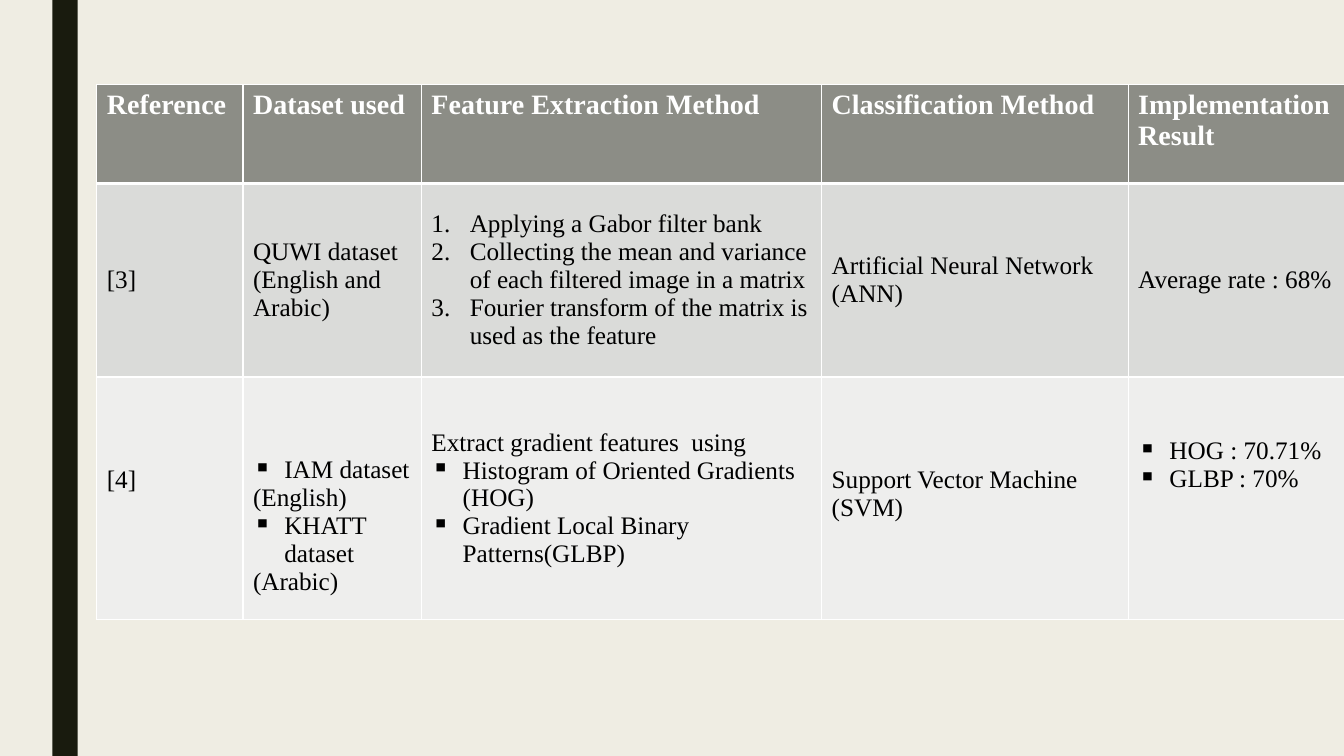
from dataclasses import dataclass
from typing import Optional

from lxml import etree
from pptx import Presentation
from pptx.dml.color import RGBColor
from pptx.enum.shapes import MSO_SHAPE
from pptx.enum.text import MSO_ANCHOR
from pptx.oxml.ns import qn
from pptx.util import Inches, Pt

RECTANGLE = MSO_SHAPE.RECTANGLE
TOP = MSO_ANCHOR.TOP
MIDDLE = MSO_ANCHOR.MIDDLE

CREAM = RGBColor(0xEF, 0xED, 0xE3)
DARK_OLIVE = RGBColor(0x19, 0x1B, 0x0E)
WHITE = RGBColor(0xFF, 0xFF, 0xFF)
BLACK = RGBColor(0x00, 0x00, 0x00)
HEADER_GRAY = RGBColor(0x8C, 0x8D, 0x86)
MID_GRAY = RGBColor(0xDA, 0xDB, 0xD9)
PALE_GRAY = RGBColor(0xEE, 0xEE, 0xED)

FONT = "Times New Roman"
COLUMN_WIDTHS = (1.45, 1.77, 3.97, 3.04, 2.15)
THIN, THICK = 1, 3


@dataclass(frozen=True)
class Line:
    text: str
    marker: Optional[str] = None


@dataclass(frozen=True)
class Entry:
    lines: tuple[Line, ...]
    anchor: MSO_ANCHOR = MIDDLE
    margin_top: float = 0.05


@dataclass(frozen=True)
class RowStyle:
    height: float
    fill: RGBColor
    color: RGBColor
    size: int
    bold: bool
    top_border: int
    bottom_border: int


@dataclass(frozen=True)
class Marker:
    indent: float
    tag: str
    attribute: str
    value: str


MARKERS = {
    "number": Marker(0.38, "a:buAutoNum", "type", "arabicPeriod"),
    "square": Marker(0.31, "a:buChar", "char", "▪"),
}

HEADER = tuple(
    Entry((Line(text),), TOP)
    for text in (
        "Reference",
        "Dataset used",
        "Feature Extraction Method",
        "Classification Method",
        "Implementation Result",
    )
)

GABOR_STUDY = (
    Entry((Line("[3]"),)),
    Entry((Line("QUWI dataset (English and Arabic)"),)),
    Entry((
        Line("Applying a Gabor filter bank", "number"),
        Line("Collecting the mean and variance of each filtered image in a matrix", "number"),
        Line("Fourier transform of the matrix is used as the feature", "number"),
    )),
    Entry((Line("Artificial Neural Network"), Line("(ANN)"))),
    Entry((Line("Average rate : 68%"),)),
)

GRADIENT_STUDY = (
    Entry((Line("[4]"),), TOP, 0.88),
    Entry((
        Line("IAM dataset", "square"),
        Line("(English)"),
        Line("KHATT dataset", "square"),
        Line("(Arabic)"),
    ), MIDDLE, 0.6),
    Entry((
        Line("Extract gradient features  using"),
        Line("Histogram of Oriented Gradients (HOG)", "square"),
        Line("Gradient Local Binary Patterns(GLBP)", "square"),
    )),
    Entry((Line("Support Vector Machine (SVM)"),), TOP, 0.88),
    Entry((Line("HOG : 70.71%", "square"), Line("GLBP : 70%", "square")), TOP, 0.6),
)

ROWS = (
    (RowStyle(0.98, HEADER_GRAY, WHITE, 20, True, THIN, THICK), HEADER),
    (RowStyle(1.92, MID_GRAY, BLACK, 18, False, THICK, THIN), GABOR_STUDY),
    (RowStyle(2.41, PALE_GRAY, BLACK, 18, False, THIN, THIN), GRADIENT_STUDY),
)


def add_border(cell, side: str, width: int) -> None:
    properties = cell._tc.get_or_add_tcPr()
    border = etree.SubElement(properties, qn(f"a:ln{side}"), w=str(Pt(width)))
    fill = etree.SubElement(border, qn("a:solidFill"))
    etree.SubElement(fill, qn("a:srgbClr"), val=str(WHITE))


def add_marker(para, marker: Marker) -> None:
    properties = para._p.get_or_add_pPr()
    properties.set("marL", str(Inches(marker.indent)))
    properties.set("indent", str(-Inches(marker.indent)))
    etree.SubElement(properties, qn(marker.tag), {marker.attribute: marker.value})


def fill_cell(cell, entry: Entry, style: RowStyle) -> None:
    borders = {"L": THIN, "R": THIN, "T": style.top_border, "B": style.bottom_border}
    for side, width in borders.items():
        add_border(cell, side, width)
    cell.fill.solid()
    cell.fill.fore_color.rgb = style.fill
    cell.vertical_anchor = entry.anchor
    cell.margin_top = Inches(entry.margin_top)
    frame = cell.text_frame
    for index, line in enumerate(entry.lines):
        para = frame.add_paragraph() if index else frame.paragraphs[0]
        para.text = line.text
        if line.marker:
            add_marker(para, MARKERS[line.marker])
        para.font.name = FONT
        para.font.size = Pt(style.size)
        para.font.bold = style.bold
        para.font.color.rgb = style.color


def add_study_table(page) -> None:
    frame = page.shapes.add_table(
        len(ROWS), len(COLUMN_WIDTHS), Inches(0.96), Inches(0.84),
        Inches(sum(COLUMN_WIDTHS)), Inches(sum(style.height for style, _ in ROWS)),
    )
    table = frame.table
    table.first_row = False
    table.horz_banding = False
    for column, width in zip(table.columns, COLUMN_WIDTHS):
        column.width = Inches(width)
    for row, (style, entries) in zip(table.rows, ROWS):
        row.height = Inches(style.height)
        for cell, entry in zip(row.cells, entries):
            fill_cell(cell, entry, style)


def add_side_bar(page) -> None:
    bar = page.shapes.add_shape(RECTANGLE, Inches(0.52), 0, Inches(0.25), Inches(7.5))
    bar.shadow.inherit = False
    bar.fill.solid()
    bar.fill.fore_color.rgb = DARK_OLIVE
    bar.line.fill.background()


def main() -> None:
    deck = Presentation()
    deck.slide_width = Inches(13.33)
    deck.slide_height = Inches(7.5)
    page = deck.slides.add_slide(deck.slide_layouts[6])
    page.background.fill.solid()
    page.background.fill.fore_color.rgb = CREAM
    add_side_bar(page)
    add_study_table(page)
    deck.save("out.pptx")


if __name__ == "__main__":
    main()
